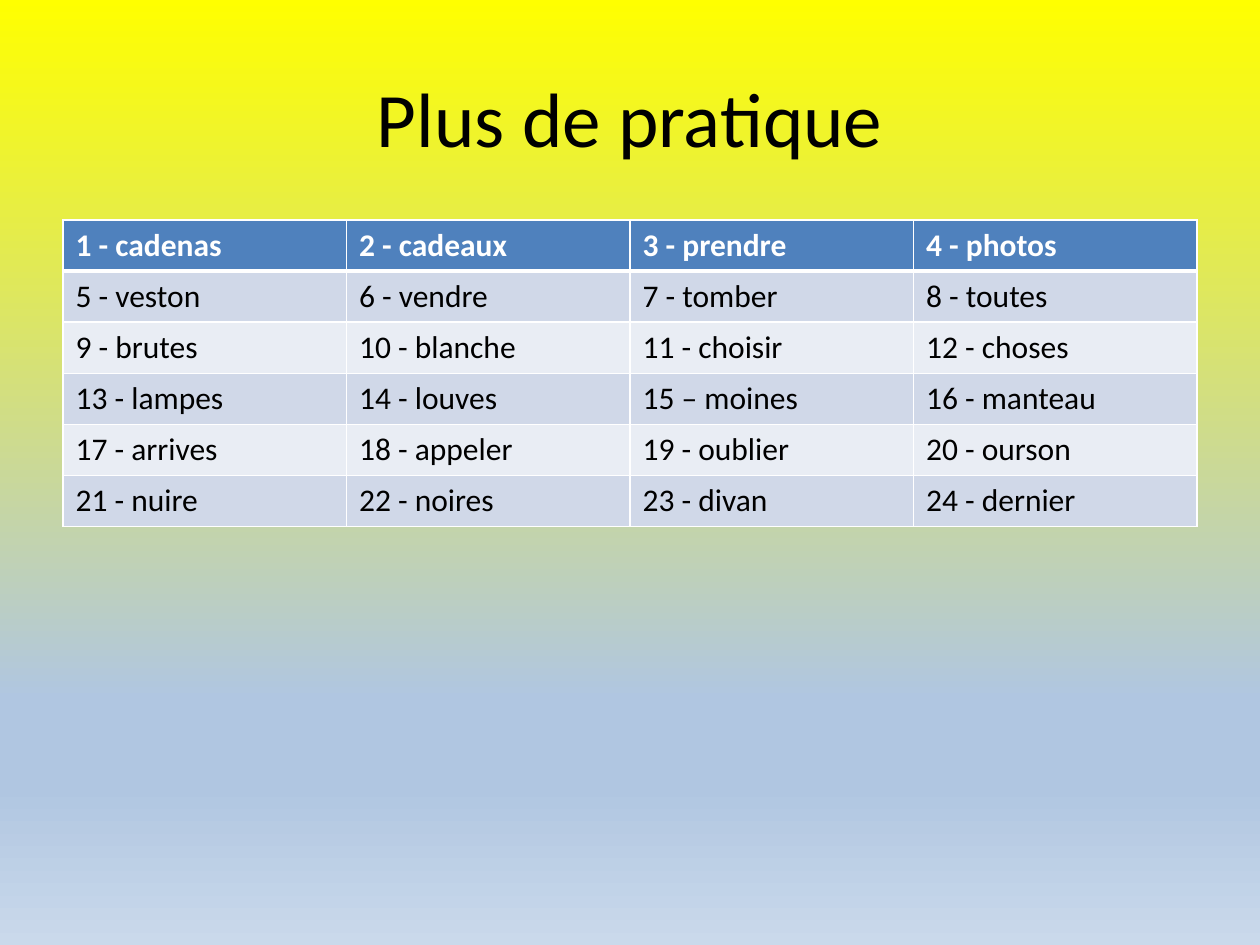
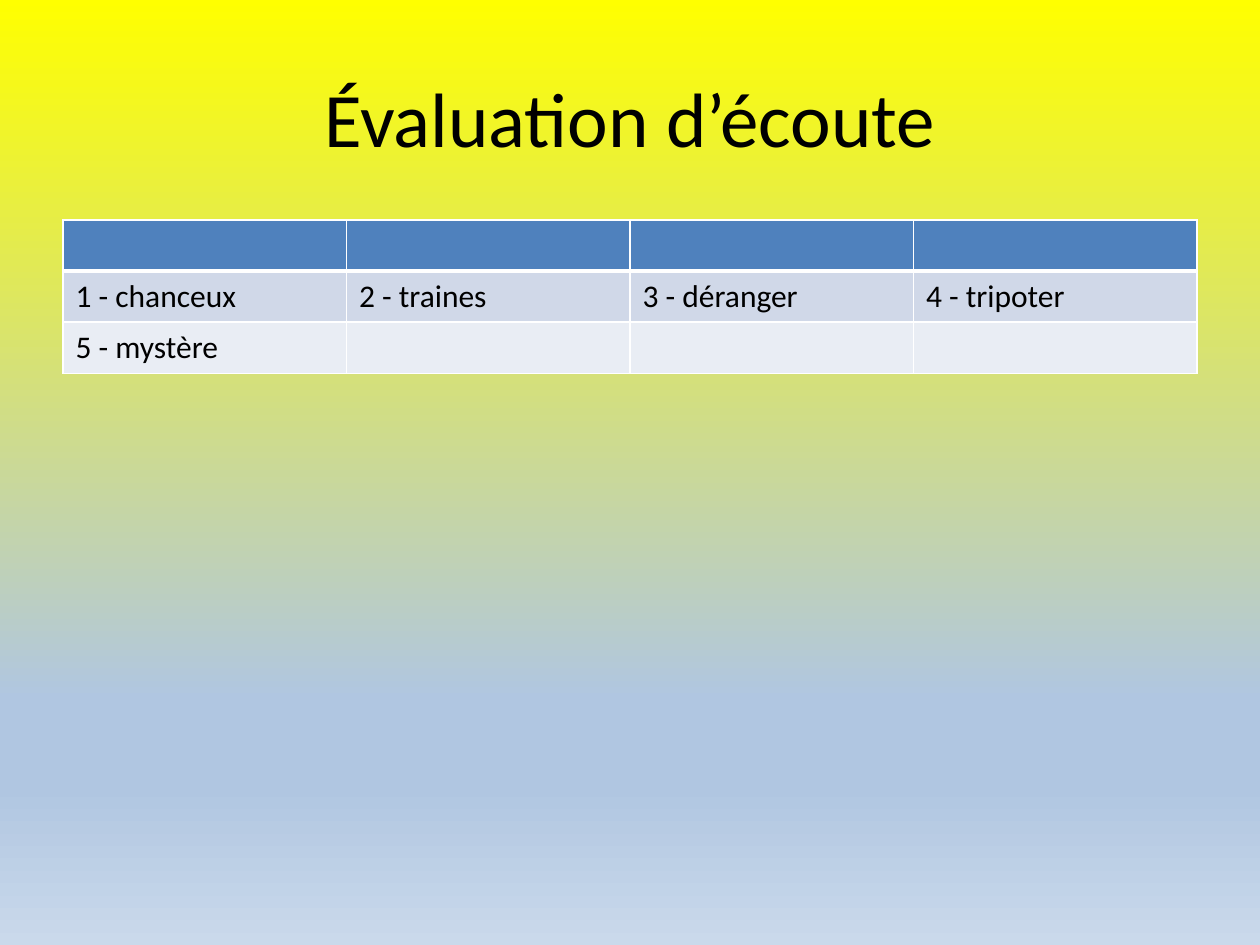
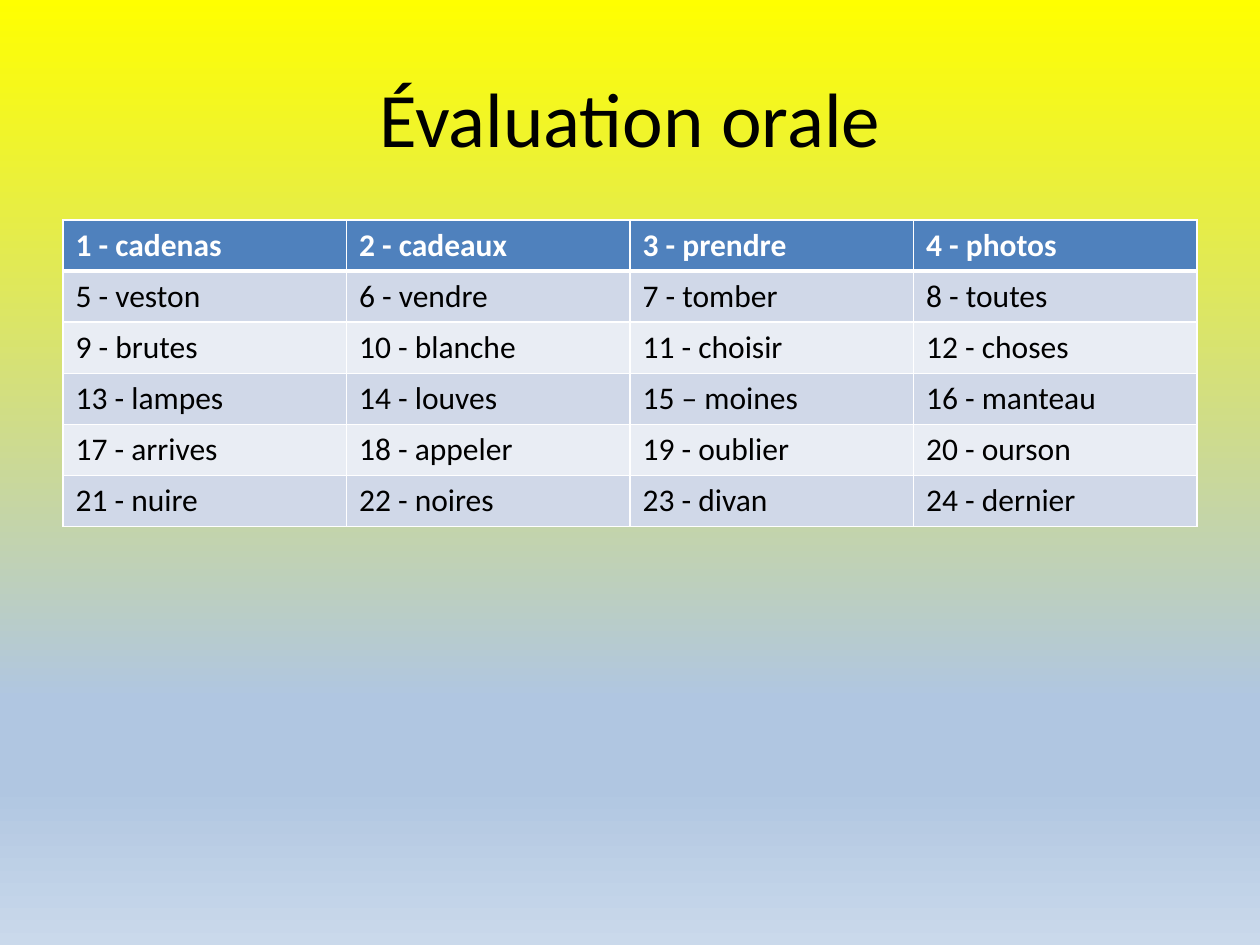
from lxml.etree import SubElement
from pptx import Presentation
from pptx.dml.color import RGBColor
from pptx.enum.text import MSO_ANCHOR, PP_ALIGN
from pptx.oxml.ns import qn
from pptx.util import Pt

# Content
WORDS = [
    ["1 - cadenas", "2 - cadeaux", "3 - prendre", "4 - photos"],
    ["5 - veston", "6 - vendre", "7 - tomber", "8 - toutes"],
    ["9 - brutes", "10 - blanche", "11 - choisir", "12 - choses"],
    ["13 - lampes", "14 - louves", "15 – moines", "16 - manteau"],
    ["17 - arrives", "18 - appeler", "19 - oublier", "20 - ourson"],
    ["21 - nuire", "22 - noires", "23 - divan", "24 - dernier"],
]
HEARD = [
    ["", "", "", ""],
    ["1 - chanceux", "2 - traines", "3 - déranger", "4 - tripoter"],
    ["5 - mystère", "", "", ""],
]
SLIDES = [
    ("Plus de pratique", WORDS),
    ("Évaluation d’écoute", HEARD),
    ("Évaluation orale", WORDS),
]

# Shared look
FONT = "Calibri"
BLACK = RGBColor(0x00, 0x00, 0x00)
WHITE = RGBColor(0xFF, 0xFF, 0xFF)
HEAD = RGBColor(0x4F, 0x81, 0xBD)
BANDS = [RGBColor(0xE9, 0xED, 0xF4), RGBColor(0xD0, 0xD8, 0xE8)]
YELLOW = RGBColor(0xFF, 0xFF, 0x00)
SKY = RGBColor(0xB0, 0xC6, 0xE1)
PALE = RGBColor(0xCA, 0xD9, 0xEB)
STOPS = [(0, YELLOW), (74, SKY), (83, SKY), (100, PALE)]

# Lengths in px, 126 to the inch
LEFT, WIDTH = 63, 1134
TITLE_TOP, TITLE_H = 38, 157
GRID_TOP, ROW_H = 220, 51


def px(n):
    return round(n * 914400 / 126)


def style(par, size, color, bold=False):
    for run in par.runs:
        font = run.font
        font.name, font.size, font.bold = FONT, Pt(size), bold
        font.color.rgb = color


def add_color(parent, color):
    fill = SubElement(parent, qn("a:solidFill"))
    SubElement(fill, qn("a:srgbClr"), val=str(color))


def paint_back(master):
    fill = master.background.fill
    fill.gradient()
    fill.gradient_angle = 270
    stops = master.element.find(".//" + qn("a:gsLst"))
    for old in list(stops):
        stops.remove(old)
    for pos, color in STOPS:
        stop = SubElement(stops, qn("a:gs"), pos=str(pos * 1000))
        SubElement(stop, qn("a:srgbClr"), val=str(color))


def add_edges(cell, row):
    props = cell._tc.get_or_add_tcPr()
    top = 3 if row == 1 else 1
    low = 3 if row == 0 else 1
    for side, width in (("L", 1), ("R", 1), ("T", top), ("B", low)):
        line = SubElement(props, qn("a:ln" + side), w=str(Pt(width)))
        add_color(line, WHITE)


def add_title(slide, text):
    title = slide.shapes.title
    title.left, title.top = px(LEFT), px(TITLE_TOP)
    title.width, title.height = px(WIDTH), px(TITLE_H)
    frame = title.text_frame
    frame.text = text
    frame.vertical_anchor = MSO_ANCHOR.MIDDLE
    par = frame.paragraphs[0]
    par.alignment = PP_ALIGN.CENTER
    style(par, 44, BLACK)


def add_grid(slide, rows):
    grid = slide.shapes.add_table(
        len(rows), len(rows[0]), px(LEFT), px(GRID_TOP),
        px(WIDTH), px(ROW_H * len(rows))).table
    for r, row in enumerate(rows):
        for c, text in enumerate(row):
            cell = grid.cell(r, c)
            add_edges(cell, r)
            cell.fill.solid()
            cell.fill.fore_color.rgb = BANDS[r % 2] if r else HEAD
            cell.text_frame.text = text
            style(cell.text_frame.paragraphs[0], 18,
                  BLACK if r else WHITE, bold=r == 0)


def main():
    prs = Presentation()
    prs.slide_width, prs.slide_height = px(1260), px(945)
    paint_back(prs.slide_master)
    for title, rows in SLIDES:
        slide = prs.slides.add_slide(prs.slide_layouts[5])
        add_title(slide, title)
        add_grid(slide, rows)
    prs.save("out.pptx")


if __name__ == "__main__":
    main()
